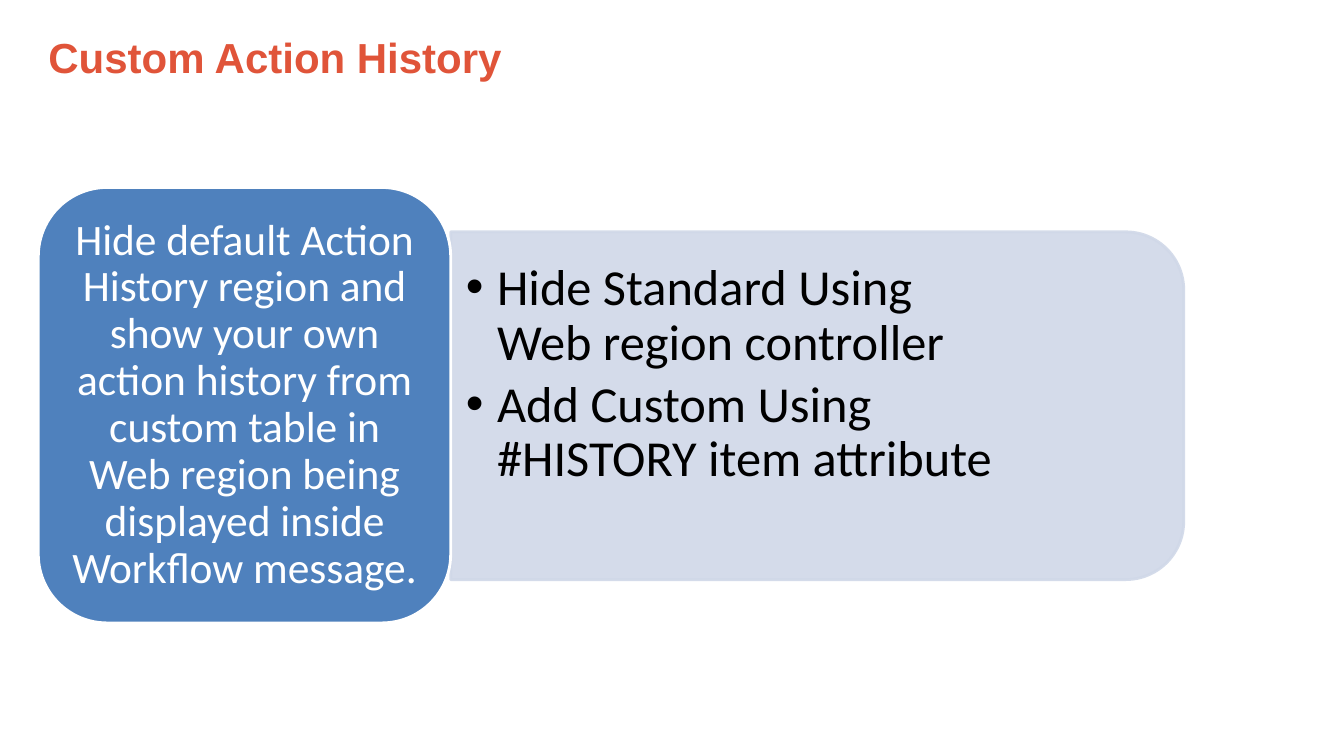
"""Build the Custom Action History slide: a label block beside a panel of two steps."""
from lxml import etree
from pptx import Presentation
from pptx.dml.color import RGBColor
from pptx.enum.shapes import MSO_SHAPE
from pptx.enum.text import MSO_ANCHOR, MSO_AUTO_SIZE, PP_ALIGN
from pptx.oxml.ns import qn
from pptx.util import Inches, Pt

ROUNDED, ROUNDED_TOP = MSO_SHAPE.ROUNDED_RECTANGLE, MSO_SHAPE.ROUND_2_SAME_RECTANGLE
MIDDLE, TOP = MSO_ANCHOR.MIDDLE, MSO_ANCHOR.TOP
LEFT, CENTER = PP_ALIGN.LEFT, PP_ALIGN.CENTER
NO_FIT = MSO_AUTO_SIZE.NONE

THEME = {
    "title": {"name": "Arial", "size": Pt(30), "bold": True, "color": RGBColor.from_string("E05439")},
    "steps": {"name": "Calibri", "size": Pt(36), "bold": False, "color": RGBColor.from_string("000000")},
    "summary": {"name": "Calibri", "size": Pt(31), "bold": False, "color": RGBColor.from_string("FFFFFF")},
    "panel": RGBColor.from_string("D0D8E8"),
    "block": RGBColor.from_string("4F81BD"),
    "edge": RGBColor.from_string("FFFFFF"),
}


def write(holder, text, style, frame_format, paragraph_format):
    frame = holder.text_frame
    frame.text = text
    for name, value in frame_format.items():
        setattr(frame, name, value)
    for paragraph in frame.paragraphs:
        for name, value in paragraph_format.items():
            setattr(paragraph, name, value)
        for run in paragraph.runs:
            for name, value in THEME[style].items():
                if name == "color":
                    run.font.color.rgb = value
                else:
                    setattr(run.font, name, value)


def add_block(kind, box, fill, edge):
    block = slide.shapes.add_shape(kind, *map(Inches, box))
    block.shadow.inherit = False
    block.fill.solid()
    block.fill.fore_color.rgb = THEME[fill]
    block.line.color.rgb = THEME[edge]
    block.line.width = Pt(2)
    return block


deck = Presentation()
deck.slide_width, deck.slide_height = Inches(13.33), Inches(7.5)
slide = deck.slides.add_slide(deck.slide_layouts[1])
title, steps = slide.placeholders

for holder, box in ((title, (0.38, 0, 9.71, 1.13)), (steps, (4.47, 2.46, 7.1, 3.12))):
    holder.left, holder.top, holder.width, holder.height = map(Inches, box)

write(title, "Custom Action History", "title",
      {"vertical_anchor": MIDDLE, "auto_size": NO_FIT, "word_wrap": True},
      {"alignment": LEFT})

panel = add_block(ROUNDED_TOP, (6.38, 0.39, 3.45, 7.27), "panel", "panel")
panel.rotation = 90
for color in panel.element.spPr.iter(qn("a:srgbClr")):
    etree.SubElement(color, qn("a:alpha"), val="90000")
panel.element.addnext(steps.element)

write(steps,
      "Hide Standard Using\vWeb region controller\nAdd Custom Using\v#HISTORY item attribute",
      "steps",
      {"vertical_anchor": TOP, "auto_size": NO_FIT, "word_wrap": True,
       "margin_left": Inches(0.15), "margin_right": Inches(0.15),
       "margin_top": Inches(0.14), "margin_bottom": Inches(0.07)},
      {"alignment": LEFT, "line_spacing": 0.9, "space_before": Pt(0), "space_after": Pt(5.4)})
for step in steps.text_frame.paragraphs:
    properties = step._p.get_or_add_pPr()
    properties.set("marL", str(Inches(0.31)))
    properties.set("indent", str(-Inches(0.31)))
    etree.SubElement(properties, qn("a:buFont"), typeface="Arial")
    etree.SubElement(properties, qn("a:buChar"), char="•")

summary = add_block(ROUNDED, (0.38, 1.86, 4.09, 4.32), "block", "edge")
write(summary,
      "Hide default Action History region and show your own action history from custom table "
      "in Web region being displayed inside Workflow message.",
      "summary",
      {"vertical_anchor": MIDDLE, "auto_size": NO_FIT, "word_wrap": True,
       "margin_left": Inches(0.13), "margin_right": Inches(0.13),
       "margin_top": Inches(0.06), "margin_bottom": Inches(0.06)},
      {"alignment": CENTER, "line_spacing": 0.9})

deck.save("out.pptx")
